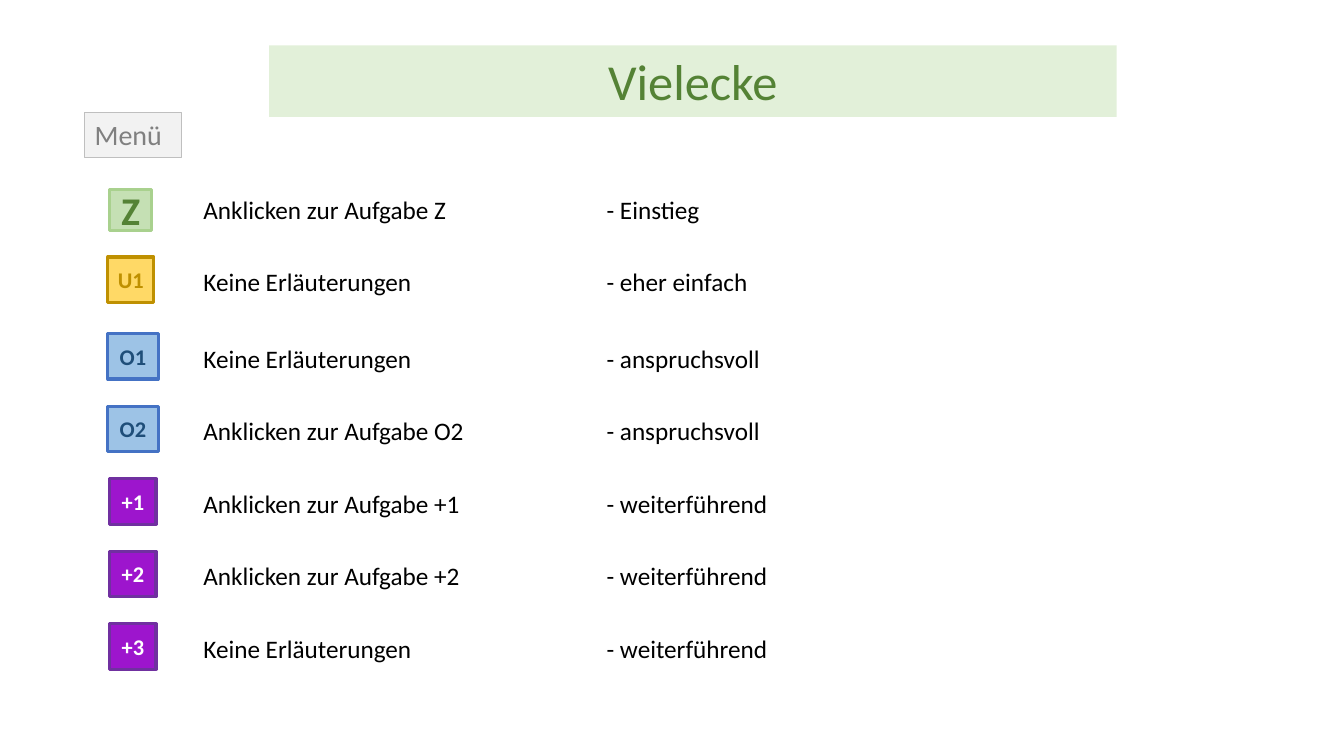
from dataclasses import dataclass

from lxml import etree
from pptx import Presentation
from pptx.dml.color import RGBColor
from pptx.enum.shapes import MSO_SHAPE
from pptx.enum.text import MSO_ANCHOR, MSO_AUTO_SIZE, PP_ALIGN
from pptx.oxml.ns import qn
from pptx.util import Pt

RECTANGLE = MSO_SHAPE.RECTANGLE
TOP, MIDDLE = MSO_ANCHOR.TOP, MSO_ANCHOR.MIDDLE
LEFT, CENTER = PP_ALIGN.LEFT, PP_ALIGN.CENTER
NO_AUTOFIT = MSO_AUTO_SIZE.NONE
TITLE_ONLY = 5


@dataclass(frozen=True)
class Level:
    fill: str
    line: str
    text: str
    left: float
    width: float
    size: float = 16


@dataclass(frozen=True)
class Theme:
    font: str = "Calibri"
    title_size: float = 36
    menu_size: float = 20
    body_size: float = 18
    title_fill: str = "E2F0D9"
    title_text: str = "548235"
    menu_fill: str = "F2F2F2"
    menu_line: str = "BFBFBF"
    menu_text: str = "808080"
    body_text: str = "000000"
    entry: Level = Level("C5E0B4", "A9D18E", "548235", 78.5, 30, 28)
    basic: Level = Level("FFD966", "BF9000", "BF9000", 77, 33)
    hard: Level = Level("9DC3E6", "4472C4", "1F4E79", 77, 36)
    extra: Level = Level("9D15CD", "7030A0", "FFFFFF", 78.5, 33)


class SlideBuilder:
    def __init__(self, deck, theme):
        self.theme = theme
        self.page = deck.slides.add_slide(deck.slide_layouts[TITLE_ONLY])

    def set_text(self, shape, text, size, color, bold=False, align=LEFT,
                 anchor=TOP, side_inset=7.2):
        frame = shape.text_frame
        frame.word_wrap = True
        frame.auto_size = NO_AUTOFIT
        frame.vertical_anchor = anchor
        frame.margin_left = frame.margin_right = Pt(side_inset)
        frame.margin_top = frame.margin_bottom = Pt(3.6)
        para = frame.paragraphs[0]
        para.alignment = align
        span = para.add_run()
        span.text = text
        span.font.name = self.theme.font
        span.font.size = Pt(size)
        span.font.bold = bold
        span.font.color.rgb = RGBColor.from_string(color)
        return para

    def title(self, text, left, top, width, height):
        box = self.page.shapes.title
        box.left, box.top = Pt(left), Pt(top)
        box.width, box.height = Pt(width), Pt(height)
        box.fill.solid()
        box.fill.fore_color.rgb = RGBColor.from_string(self.theme.title_fill)
        self.set_text(box, text, self.theme.title_size,
                      self.theme.title_text, align=CENTER)

    def panel(self, left, top, width, height, fill, line, line_width):
        box = self.page.shapes.add_shape(
            RECTANGLE, Pt(left), Pt(top), Pt(width), Pt(height))
        box.shadow.inherit = False
        box.fill.solid()
        box.fill.fore_color.rgb = RGBColor.from_string(fill)
        box.line.color.rgb = RGBColor.from_string(line)
        box.line.width = Pt(line_width)
        return box

    def menu(self, text, left, top, width, height):
        theme = self.theme
        box = self.panel(left, top, width, height, theme.menu_fill,
                         theme.menu_line, 0.75)
        self.set_text(box, text, theme.menu_size, theme.menu_text)

    def badge(self, text, level, top, height):
        box = self.panel(level.left, top, level.width, height, level.fill,
                         level.line, 2.25)
        self.set_text(box, text, level.size, level.text, bold=True,
                      align=CENTER, anchor=MIDDLE, side_inset=0)

    def hint(self, text, rating, left, top, width, height, tab):
        box = self.page.shapes.add_textbox(
            Pt(left), Pt(top), Pt(width), Pt(height))
        para = self.set_text(box, f"{text}\t- {rating}",
                             self.theme.body_size, self.theme.body_text)
        # Tab stop that aligns the ratings in one column
        properties = para._p.get_or_add_pPr()
        stops = etree.SubElement(properties, qn("a:tabLst"))
        etree.SubElement(stops, qn("a:tab"), pos=str(Pt(tab)), algn="l")


def main():
    deck = Presentation()
    deck.slide_width, deck.slide_height = Pt(960), Pt(540)
    theme = Theme()
    slide = SlideBuilder(deck, theme)

    # Heading and menu button
    slide.title("Vielecke", 192.2, 32.4, 605.5, 51.1)
    slide.menu("Menü", 60.5, 80.6, 69.1, 31.7)

    # Task rows: the first two stand apart, the rest share one pitch
    no_help, click = "Keine Erläuterungen", "Anklicken zur Aufgabe "
    tasks = [
        ("Z", theme.entry, click + "Z", "Einstieg"),
        ("U1", theme.basic, no_help, "eher einfach"),
        ("O1", theme.hard, no_help, "anspruchsvoll"),
        ("O2", theme.hard, click + "O2", "anspruchsvoll"),
        ("+1", theme.extra, click + "+1", "weiterführend"),
        ("+2", theme.extra, click + "+2", "weiterführend"),
        ("+3", theme.extra, no_help, "weiterführend"),
    ]
    tops = [135.4, 183.6] + [238.3 + 51.84 * step for step in range(5)]
    for (name, level, text, rating), top in zip(tasks, tops):
        is_entry = level is theme.entry
        slide.badge(name, level, top, 29.5 if is_entry else 32.4)
        slide.hint(text, rating, 138.2, top + (0 if is_entry else 3.2),
                   480, 29, tab=288)

    deck.save("out.pptx")


if __name__ == "__main__":
    main()
